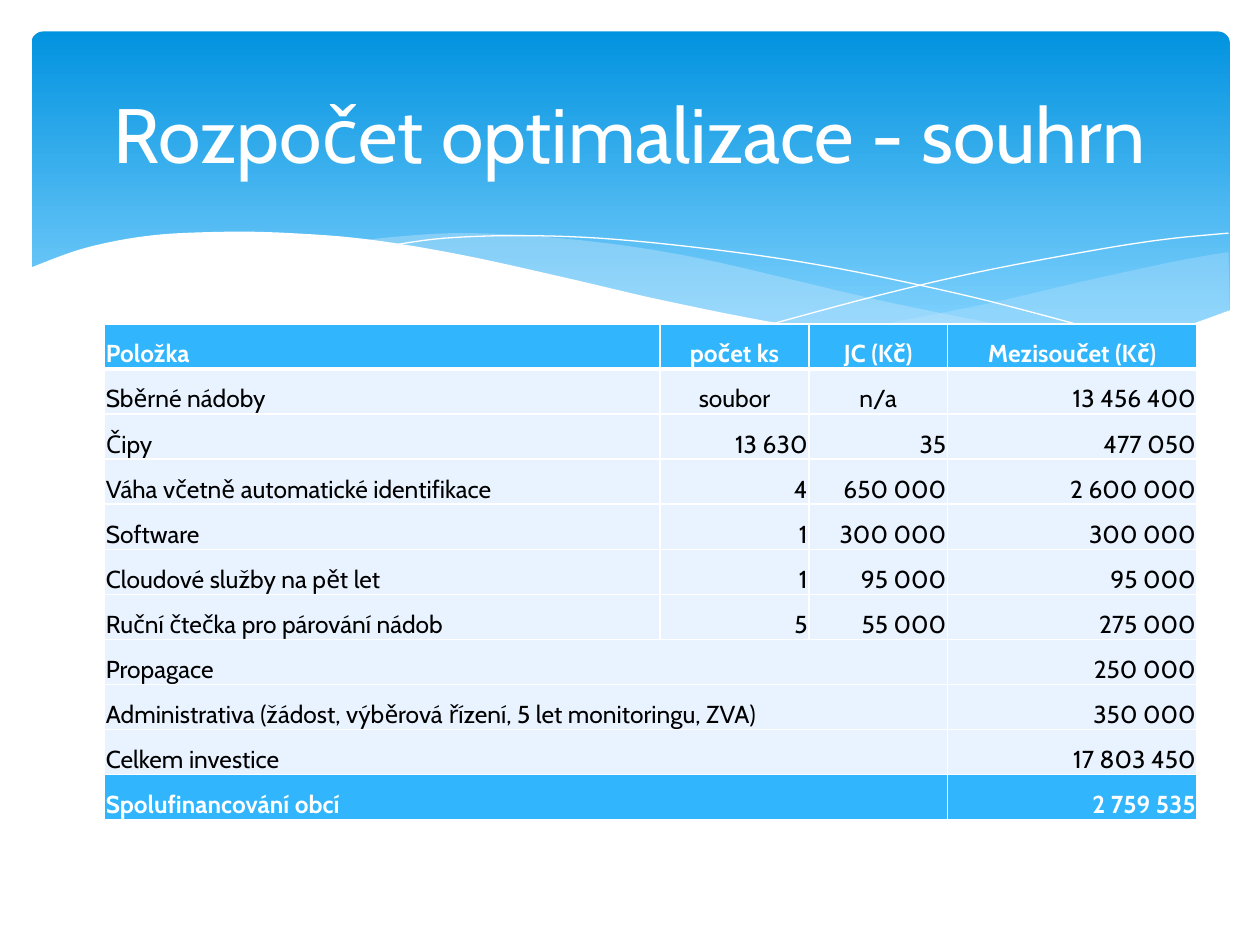
import dataclasses

import pptx
import pptx.dml.color
import pptx.enum.shapes
import pptx.enum.text
import pptx.oxml
import pptx.oxml.ns
import pptx.util
from pptx.util import Inches

ALIGN = pptx.enum.text.PP_ALIGN
ANCHOR = pptx.enum.text.MSO_ANCHOR


@dataclasses.dataclass(frozen=True)
class Theme:
    font: str = "Cabin"
    title_size: int = 44
    table_size: int = 14
    white: str = "FFFFFF"
    black: str = "000000"
    accent: str = "31B6FD"
    pale: str = "E8F3FF"
    wave: str = "C6E7FC"
    band_top: str = "0293E0"
    band_bottom: str = "83D3FE"


@dataclasses.dataclass(frozen=True)
class Box:
    left: float
    top: float
    width: float
    height: float

    def lengths(self):
        return [Inches(value) for value in dataclasses.astuple(self)]


THEME = Theme()

RIGHT_WAVE_TOP = [(9.52, 0.16), (9.12, 0.23), (8.38, 0.39), (7.56, 0.58), (6.38, 0.81)]
RIGHT_WAVE_BOTTOM = [(6.38, 0.81), (6.96, 0.88), (7.58, 0.93), (8.12, 0.93),
                     (8.58, 0.89), (8.98, 0.81), (9.26, 0.73), (9.53, 0.63)]
MIDDLE_WAVE_TOP = [(8.7, 0.89), (7.84, 0.76), (6.83, 0.56), (6.06, 0.38), (5.32, 0.21),
                   (4.66, 0.1), (3.97, 0.03), (3.38, 0.01), (2.9, 0.04), (2.63, 0.07)]
MIDDLE_WAVE_BOTTOM = [(2.63, 0.07), (3.39, 0.19), (4.26, 0.38), (5.07, 0.56), (5.78, 0.71),
                      (6.42, 0.82), (6.99, 0.9), (7.62, 0.94), (8.15, 0.94), (8.7, 0.89)]
FALLING_LINE = [(2.86, 0.11), (3.3, 0.05), (3.93, 0.03), (4.66, 0.06), (5.59, 0.16),
                (6.42, 0.29), (7.37, 0.49), (8.08, 0.67), (8.84, 0.88)]
RISING_LINE = [(5.9, 0.73), (6.72, 0.51), (7.53, 0.32), (8.43, 0.15), (9.01, 0.06), (9.52, 0.01)]
FRONT_WAVE = [(9.54, 0.62), (9.07, 0.78), (8.52, 0.89), (7.86, 0.93), (7.03, 0.88),
              (6.03, 0.74), (5.06, 0.55), (4.24, 0.36), (3.42, 0.18), (2.69, 0.06),
              (2.07, 0.01), (1.54, 0), (0.96, 0.03), (0.44, 0.13), (0, 0.29)]

COLUMN_WIDTHS = [4.41, 1.18, 1.1, 1.98]
BUDGET = [
    ["Položka", "počet ks", "JC (Kč)", "Mezisoučet (Kč)"],
    ["Sběrné nádoby", "soubor", "n/a", "13 456 400"],
    ["Čipy", "13 630", "35", "477 050"],
    ["Váha včetně automatické identifikace", "4", "650 000", "2 600 000"],
    ["Software", "1", "300 000", "300 000"],
    ["Cloudové služby na pět let", "1", "95 000", "95 000"],
    ["Ruční čtečka pro párování nádob", "5", "55 000", "275 000"],
    ["Propagace", None, None, "250 000"],
    ["Administrativa (žádost, výběrová řízení, 5 let monitoringu, ZVA)", None, None, "350 000"],
    ["Celkem investice", None, None, "17 803 450"],
    ["Spolufinancování obcí", None, None, "2 759 535"],
]


def rgb(value):
    return pptx.dml.color.RGBColor.from_string(value)


def write(para, text, size, color, bold=False):
    span = para.add_run()
    span.text = text
    span.font.name = THEME.font
    span.font.size = pptx.util.Pt(size)
    span.font.bold = bold
    span.font.color.rgb = rgb(color)


def smooth(points, steps=6):
    padded = [points[0], *points, points[-1]]
    curve = [points[0]]
    for before, start, end, after in zip(padded, padded[1:], padded[2:], padded[3:]):
        for step in range(1, steps + 1):
            t = step / steps
            curve.append(tuple(
                (2 * b + (c - a) * t + (2 * a - 5 * b + 4 * c - d) * t ** 2
                 + (3 * b - a - 3 * c + d) * t ** 3) / 2
                for a, b, c, d in zip(before, start, end, after)))
    return curve


def add_outline(page, box, points, closed):
    places = [(Inches(box.left + x), Inches(box.top + y)) for x, y in points]
    builder = page.shapes.build_freeform(*places[0])
    builder.add_line_segments(places[1:], close=closed)
    shape = builder.convert_to_shape()
    shape.shadow.inherit = False
    return shape


def add_wave(page, box, points, color, opacity=100):
    shape = add_outline(page, box, points, True)
    shape.fill.solid()
    shape.fill.fore_color.rgb = rgb(color)
    shape.line.fill.background()
    if opacity < 100:
        tint = shape.fill._xPr.find(".//" + pptx.oxml.ns.qn("a:srgbClr"))
        alpha = pptx.oxml.parse_xml(
            f'<a:alpha {pptx.oxml.ns.nsdecls("a")} val="{opacity * 1000}"/>')
        tint.append(alpha)


def add_hairline(page, box, points):
    shape = add_outline(page, box, smooth(points), False)
    shape.fill.background()
    shape.line.color.rgb = rgb(THEME.white)
    shape.line.width = pptx.util.Pt(0)


def add_band(page, box):
    band = page.shapes.add_shape(
        pptx.enum.shapes.MSO_SHAPE.ROUNDED_RECTANGLE, *box.lengths())
    band.adjustments[0] = 0.034
    band.shadow.inherit = False
    band.line.fill.background()
    band.fill.gradient()
    band.fill.gradient_angle = 270
    stops = [(0, THEME.band_top), (0.9, THEME.band_bottom)]
    for stop, (position, color) in zip(band.fill.gradient_stops, stops):
        stop.position = position
        stop.color.rgb = rgb(color)


def add_waves(page, box):
    add_wave(page, box, smooth(RIGHT_WAVE_TOP) + smooth(RIGHT_WAVE_BOTTOM), THEME.wave, 29)
    add_wave(page, box, smooth(MIDDLE_WAVE_TOP) + smooth(MIDDLE_WAVE_BOTTOM), THEME.wave, 40)
    add_hairline(page, box, FALLING_LINE)
    add_hairline(page, box, RISING_LINE)
    corners = [(0, box.height), (box.width, box.height)]
    add_wave(page, box, smooth(FRONT_WAVE) + corners, THEME.white)


def add_title(page, box, text):
    frame = page.shapes.add_textbox(*box.lengths()).text_frame
    frame.word_wrap = True
    frame.vertical_anchor = ANCHOR.MIDDLE
    para = frame.paragraphs[0]
    para.alignment = ALIGN.CENTER
    write(para, text, THEME.title_size, THEME.white)


def set_borders(cell, top, bottom):
    properties = cell._tc.get_or_add_tcPr()
    for side, width in (("L", 1), ("R", 1), ("T", top), ("B", bottom)):
        properties.append(pptx.oxml.parse_xml(
            f'<a:ln{side} {pptx.oxml.ns.nsdecls("a")} w="{pptx.util.Pt(width)}">'
            f'<a:solidFill><a:srgbClr val="{THEME.white}"/></a:solidFill></a:ln{side}>'))


def choose_alignment(text, row, column):
    if column == 0:
        return ALIGN.LEFT
    return ALIGN.RIGHT if row > 0 and text[0].isdigit() else ALIGN.CENTER


def add_budget(page, box):
    table = page.shapes.add_table(len(BUDGET), len(COLUMN_WIDTHS), *box.lengths()).table
    table.horz_banding = False
    for column, width in zip(table.columns, COLUMN_WIDTHS):
        column.width = Inches(width)
    for row, texts in enumerate(BUDGET):
        table.rows[row].height = Inches(box.height / len(BUDGET))
        strong = row in (0, len(BUDGET) - 1)
        for column, text in enumerate(texts):
            cell = table.cell(row, column)
            set_borders(cell, 3 if row == 1 else 1, 3 if row == 0 else 1)
            cell.fill.solid()
            cell.fill.fore_color.rgb = rgb(THEME.accent if strong else THEME.pale)
            cell.margin_left = cell.margin_right = cell.margin_top = Inches(0.01)
            cell.margin_bottom = 0
            cell.vertical_anchor = ANCHOR.BOTTOM
            if text is not None:
                para = cell.text_frame.paragraphs[0]
                para.alignment = choose_alignment(text, row, column)
                write(para, text, THEME.table_size,
                      THEME.white if strong else THEME.black, strong)
        if texts[1] is None:
            table.cell(row, 0).merge(table.cell(row, 2))


def main():
    deck = pptx.Presentation()
    deck.slide_width = Inches(10)
    deck.slide_height = Inches(7.5)
    page = deck.slides.add_slide(deck.slide_layouts[6])
    add_band(page, Box(0.25, 0.25, 9.51, 2.7))
    add_waves(page, Box(0.23, 1.84, 9.54, 1.45))
    add_title(page, Box(0.5, 0.37, 9, 1.37), "Rozpočet optimalizace - souhrn")
    add_budget(page, Box(0.83, 2.57, 8.67, 3.94))
    deck.save("out.pptx")


if __name__ == "__main__":
    main()
